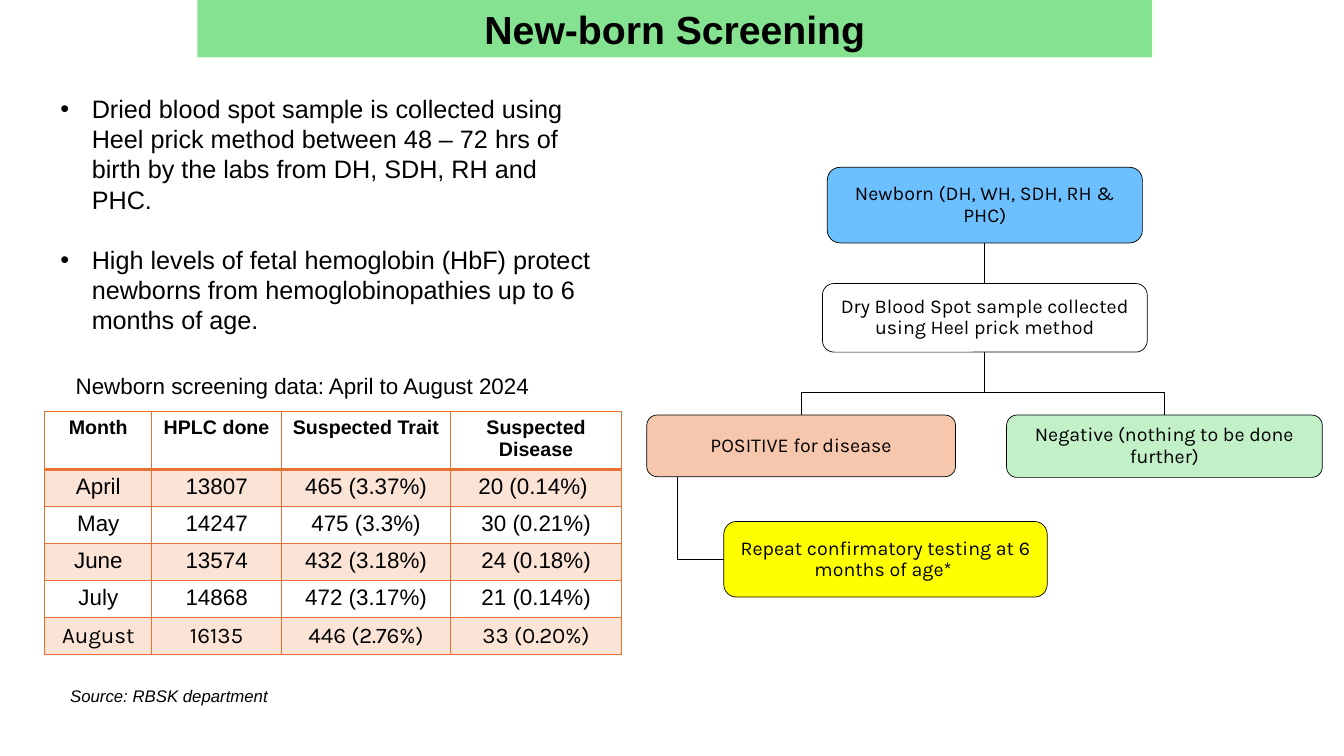
from pptx import Presentation
from pptx.util import Pt
from pptx.dml.color import RGBColor
from pptx.enum.shapes import MSO_SHAPE as Shape, MSO_CONNECTOR as Line
from pptx.enum.text import PP_ALIGN as Align, MSO_ANCHOR as Anchor
from pptx.oxml.ns import qn
from lxml.etree import SubElement as sub

BLACK, ORANGE, PEACH = "000000", "E97132", "FBE3D6"

HEAD = ["Month", "HPLC done", "Suspected Trait", "Suspected Disease"]
ROWS = [
    ["April", "13807", "465 (3.37%)", "20 (0.14%) "],
    ["May", "14247", "475 (3.3%)", "30 (0.21%)"],
    ["June", "13574", "432 (3.18%)", "24 (0.18%)"],
    ["July", "14868", "472 (3.17%)", "21 (0.14%)"],
    ["August", "16135", "446 (2.76%)", "33 (0.20%)"],
]
POINTS = [
    "Dried blood spot sample is collected using Heel prick method between "
    "48 – 72 hrs of birth by the labs from DH, SDH, RH and PHC.",
    "High levels of fetal hemoglobin (HbF) protect newborns from "
    "hemoglobinopathies up to 6 months of age.",
]


def color(code):
    return RGBColor.from_string(code)


def paint(shape, code):
    shape.fill.solid()
    shape.fill.fore_color.rgb = color(code)


def write(para, text, size=18, font="Arial", bold=False, italic=False,
          align=Align.LEFT, space=1.0, before=0):
    para.alignment = align
    para.line_spacing = space
    para.space_before = Pt(before)
    run = para.add_run()
    run.text = text
    face = run.font
    face.size, face.name = Pt(size), font
    face.bold, face.italic = bold, italic
    face.color.rgb = color(BLACK)


def add_box(slide, box):
    frame = slide.shapes.add_textbox(*map(Pt, box)).text_frame
    frame.word_wrap = True
    return frame


# Title band
def add_title(slide, box, text):
    title = slide.shapes.title
    title.left, title.top, title.width, title.height = map(Pt, box)
    paint(title, "84E291")
    title.text_frame.vertical_anchor = Anchor.MIDDLE
    write(title.text_frame.paragraphs[0], text, size=28, bold=True,
          align=Align.CENTER)


# Bulleted text
def add_list(slide, box, items):
    frame = add_box(slide, box)
    for i, item in enumerate(items):
        para = frame.add_paragraph() if i else frame.paragraphs[0]
        write(para, item, before=21.5 if i else 0)
        props = para._p.get_or_add_pPr()
        props.set("marL", str(Pt(22.5)))
        props.set("indent", str(-Pt(22.5)))
        sub(props, qn("a:buFont")).set("typeface", "Arial")
        sub(props, qn("a:buChar")).set("char", "•")


def add_edges(cell, bottom):
    props = cell._tc.get_or_add_tcPr()
    for i, side in enumerate("LRTB"):
        width = bottom if side == "B" else 1
        edge = sub(props, qn("a:ln" + side), w=str(Pt(width)))
        fill = sub(edge, qn("a:solidFill"))
        sub(fill, qn("a:srgbClr"), val=ORANGE)
        props.insert(i, edge)


# Screening table with its caption
def add_data(slide, box):
    left, top, width, height = box
    label = add_box(slide, (left + 15, top - 32, 358, 27))
    write(label.paragraphs[0],
          "Newborn screening data: April to August 2024", size=16)
    table = slide.shapes.add_table(
        len(ROWS) + 1, len(HEAD), *map(Pt, box)).table
    for col, wide in zip(table.columns, (76.5, 92.5, 121, 122)):
        col.width = Pt(wide)
    first = 41.5
    for r, texts in enumerate([HEAD] + ROWS):
        table.rows[r].height = Pt(
            (height - first) / len(ROWS) if r else first)
        for c, text in enumerate(texts):
            cell = table.cell(r, c)
            if r % 2:
                paint(cell, PEACH)
            else:
                cell.fill.background()
            write(cell.text_frame.paragraphs[0], text,
                  size=16 if r else 14, bold=r == 0, align=Align.CENTER,
                  font="Karla" if r == len(ROWS) else "Arial")
            add_edges(cell, 1 if r else 2)


def ink(shape):
    shape.line.color.rgb = color(BLACK)
    shape.line.width = Pt(0.5)


def add_elbow(slide, start, *rest):
    path = slide.shapes.build_freeform(*map(Pt, start), scale=1.0)
    path.add_line_segments([(Pt(x), Pt(y)) for x, y in rest], close=False)
    shape = path.convert_to_shape()
    shape.fill.background()
    shape.shadow.inherit = False
    ink(shape)


def add_node(slide, box, text, fill):
    node = slide.shapes.add_shape(Shape.ROUNDED_RECTANGLE, *map(Pt, box))
    node.shadow.inherit = False
    paint(node, fill)
    ink(node)
    frame = node.text_frame
    frame.word_wrap = True
    frame.vertical_anchor = Anchor.MIDDLE
    frame.margin_left = frame.margin_right = Pt(1)
    frame.margin_top = frame.margin_bottom = Pt(1)
    write(frame.paragraphs[0], text, size=14, font="Karla",
          align=Align.CENTER, space=0.9)


# Flow chart
def add_flow(slide, box):
    left, top, width, height = box
    mid = left + 241.5
    fork = top + 160.5
    born = (left + 129, top, 225, 54)
    spot = (left + 125.5, top + 83, 232, 49)
    ill = (left, top + 177, 220.5, 44)
    well = (left + width - 225.5, top + 177, 225.5, 44.5)
    again = (left + 55, top + height - 54, 231, 54)

    # Links
    link = slide.shapes.add_connector(
        Line.STRAIGHT, Pt(mid), Pt(born[1] + born[3]), Pt(mid), Pt(spot[1]))
    ink(link)
    sub(link._element.spPr, qn("a:effectLst"))
    for child in (ill, well):
        x = child[0] + child[2] / 2
        add_elbow(slide, (mid, spot[1] + spot[3]), (mid, fork),
                  (x, fork), (x, child[1]))
    x, y = left + 22, again[1] + again[3] / 2
    add_elbow(slide, (x, ill[1] + ill[3]), (x, y), (again[0], y))

    # Steps
    for place, text, fill in [
        (born, "Newborn (DH, WH, SDH, RH & PHC)", "6DC0FF"),
        (spot, "Dry Blood Spot sample collected using Heel prick method",
         "FFFFFF"),
        (ill, "POSITIVE for disease", "F6C6AD"),
        (again, "Repeat confirmatory testing at 6 months of age* ", "FFFF00"),
        (well, "Negative (nothing to be done further)", "C2F1C8"),
    ]:
        add_node(slide, place, text, fill)


# Source line
def add_source(slide, box, text):
    write(add_box(slide, box).paragraphs[0], text, size=12, italic=True)


def main():
    deck = Presentation()
    deck.slide_width, deck.slide_height = Pt(960), Pt(540)
    slide = deck.slides.add_slide(deck.slide_layouts[5])
    add_title(slide, (141, 0, 682, 41), "New-born Screening")
    add_list(slide, (36, 63, 393, 203), POINTS)
    add_data(slide, (32, 294, 412, 173))
    add_flow(slide, (462, 119.5, 482.5, 307))
    add_source(slide, (43, 486, 256, 22), "Source: RBSK department")
    deck.save("out.pptx")


if __name__ == "__main__":
    main()
